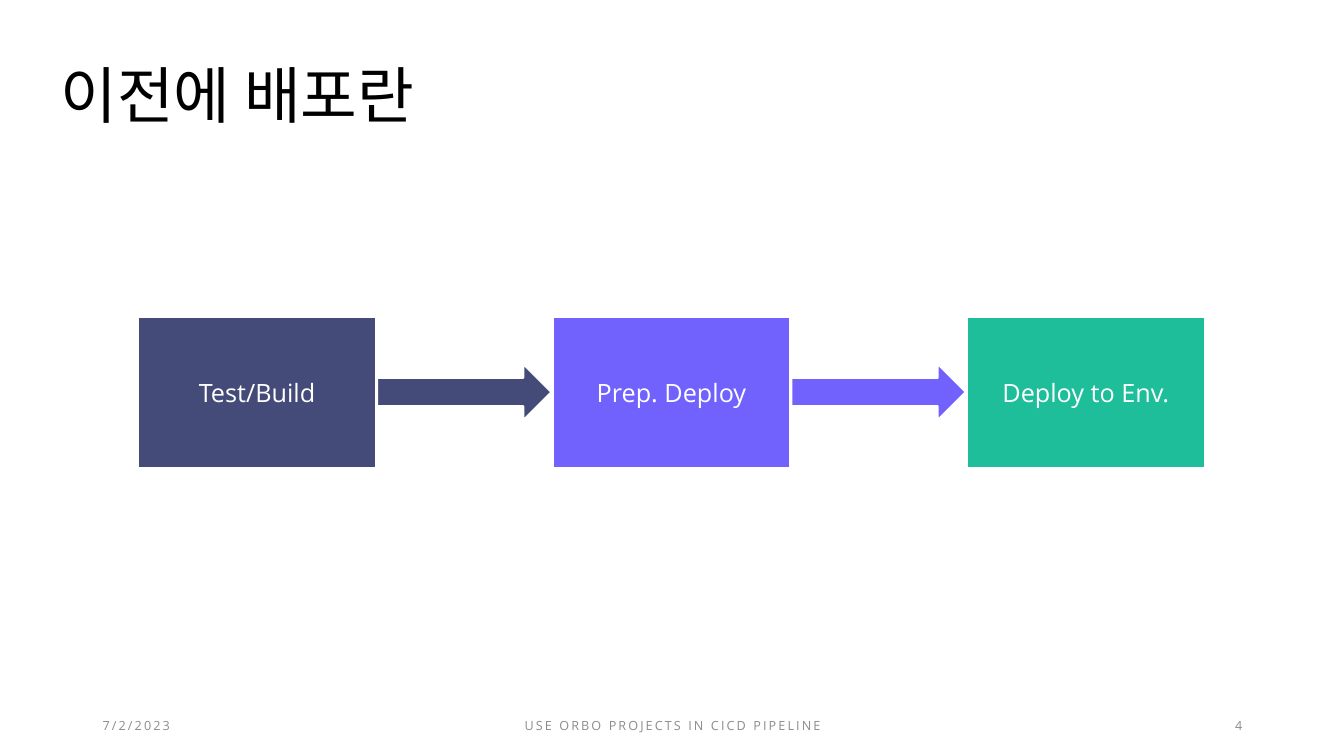
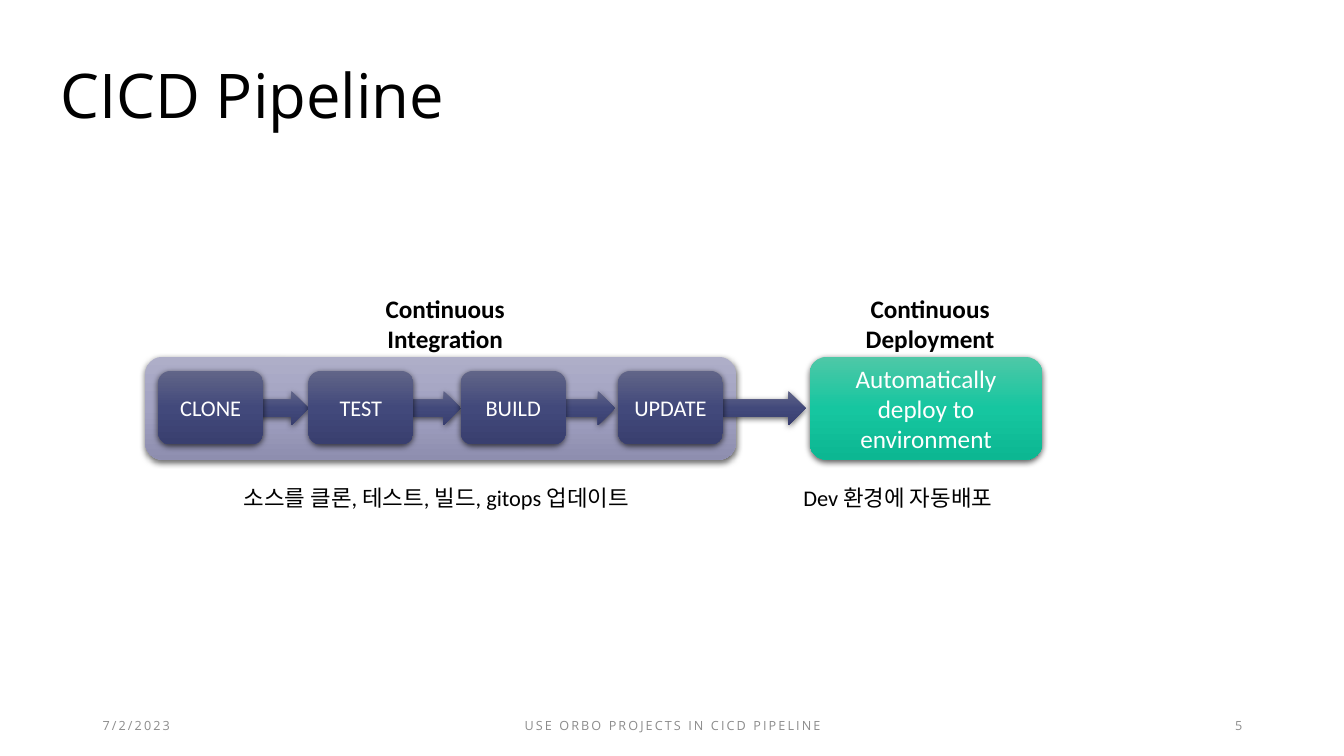
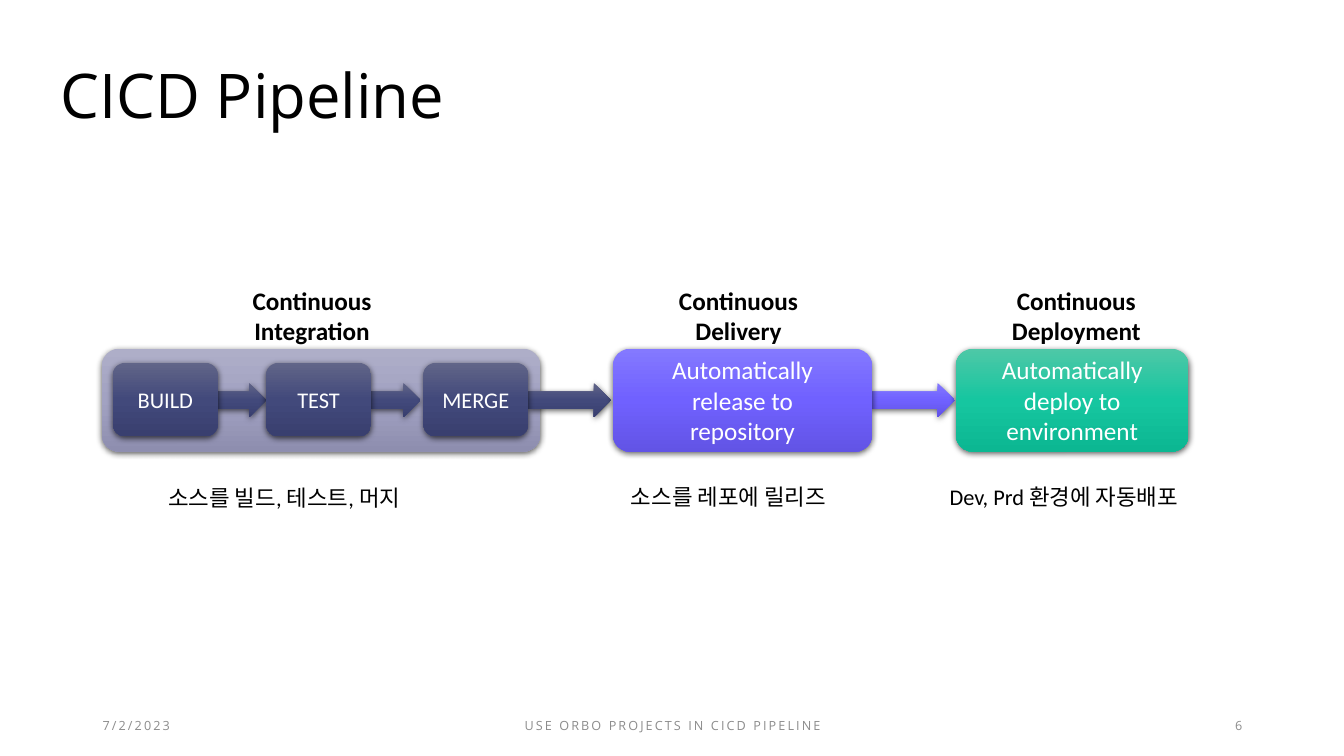
from copy import deepcopy

from lxml import etree
from pptx import Presentation
from pptx.dml.color import RGBColor
from pptx.enum.shapes import MSO_SHAPE
from pptx.enum.text import MSO_ANCHOR, MSO_AUTO_SIZE, PP_ALIGN
from pptx.oxml.ns import qn
from pptx.util import Emu, Pt

PX = 9144
RECTANGLE = MSO_SHAPE.RECTANGLE
ROUNDED = MSO_SHAPE.ROUNDED_RECTANGLE
ARROW = MSO_SHAPE.RIGHT_ARROW
LEFT, CENTER, RIGHT = PP_ALIGN.LEFT, PP_ALIGN.CENTER, PP_ALIGN.RIGHT
TOP, MIDDLE = MSO_ANCHOR.TOP, MSO_ANCHOR.MIDDLE
FIT_SHAPE = MSO_AUTO_SIZE.SHAPE_TO_FIT_TEXT

WHITE = RGBColor(0xFF, 0xFF, 0xFF)
BLACK = RGBColor(0x00, 0x00, 0x00)
GRAY = RGBColor(0x8C, 0x8C, 0x8C)
NAVY = RGBColor(0x45, 0x4B, 0x78)
VIOLET = RGBColor(0x71, 0x62, 0xFE)
GREEN = RGBColor(0x1E, 0xBE, 0x9B)
NAVY_SHADES = (RGBColor(0x61, 0x65, 0x88), RGBColor(0x42, 0x49, 0x7B), RGBColor(0x39, 0x3F, 0x6F))
VIOLET_SHADES = (RGBColor(0x84, 0x79, 0xFF), RGBColor(0x70, 0x61, 0xFF), RGBColor(0x62, 0x54, 0xE5))
GREEN_SHADES = (RGBColor(0x4E, 0xC8, 0xA7), RGBColor(0x16, 0xC6, 0xA0), RGBColor(0x0C, 0xB7, 0x92))
LAVENDER_SHADES = (RGBColor(0xAE, 0xAE, 0xC8), RGBColor(0xA2, 0xA2, 0xC2), RGBColor(0x8E, 0x8E, 0xAF))

TITLE = {"name": "Open Sans", "size": Pt(44), "color": BLACK}
FOOTER = {"name": "Open Sans", "size": Pt(9), "color": GRAY}
FLOW = {"name": "Open Sans", "size": Pt(18), "color": WHITE}
STAGE = {"name": "Calibri", "size": Pt(18), "color": WHITE}
STEP = {"name": "Calibri", "size": Pt(16), "color": WHITE}
HEADING = {"name": "Calibri", "size": Pt(18), "color": BLACK, "bold": True}
CAPTION = {"name": "Calibri", "size": Pt(16), "color": BLACK}

FOOTER_TEXT = "USE ORBO PROJECTS IN CICD PIPELINE"
STAGE_HEIGHT = 102
STEP_WIDTH, STEP_HEIGHT = 104, 73
SHORT_ARROW, LONG_ARROW, ARROW_HEIGHT = 49, 82, 34


def to_emu(box):
    """Turn a box in px into EMU lengths."""
    return [Emu(length * PX) for length in box]


def write(shape, text, style, align=CENTER, anchor=MIDDLE):
    """Write one styled paragraph into a shape and return the paragraph."""
    shape.text_frame.vertical_anchor = anchor
    paragraph = shape.text_frame.paragraphs[0]
    paragraph.text = text
    paragraph.alignment = align
    for run in paragraph.runs:
        for name, value in style.items():
            if name == "color":
                run.font.color.rgb = value
            else:
                setattr(run.font, name, value)
    return paragraph


def add_text(slide, box, text, style, align=LEFT, anchor=TOP, wrap=True):
    """Add a text box and return its frame."""
    shape = slide.shapes.add_textbox(*to_emu(box))
    shape.text_frame.word_wrap = wrap
    write(shape, text, style, align, anchor)
    return shape.text_frame


def add_flat(slide, kind, box, color):
    """Add a plain shape with a white outline."""
    shape = slide.shapes.add_shape(kind, *to_emu(box))
    shape.shadow.inherit = False
    shape.fill.solid()
    shape.fill.fore_color.rgb = color
    shape.line.color.rgb = WHITE
    shape.line.width = Pt(1.5)
    return shape


def add_raised(slide, kind, box, shades):
    """Add a shape with a three-stop vertical gradient and a soft shadow."""
    shape = slide.shapes.add_shape(kind, *to_emu(box))
    shape.line.fill.background()
    shape.fill.gradient()
    shape.fill.gradient_angle = 270
    properties = shape.element.spPr
    stop_list = properties.find(qn("a:gradFill")).find(qn("a:gsLst"))
    stop_list.append(deepcopy(stop_list[0]))
    for stop, position, shade in zip(shape.fill.gradient_stops, (0, 0.5, 1), shades):
        stop.position = position
        stop.color.rgb = shade
    shape.shadow.inherit = False
    effects = properties.find(qn("a:effectLst"))
    shadow = etree.SubElement(effects, qn("a:outerShdw"), blurRad=str(Pt(4.5)),
                              dist=str(Pt(1.5)), dir="5400000", algn="ctr", rotWithShape="0")
    color = etree.SubElement(shadow, qn("a:srgbClr"), val="000000")
    etree.SubElement(color, qn("a:alpha"), val="63000")
    return shape


def add_frame(presentation, title, number):
    """Add a blank slide with its title and footer."""
    slide = presentation.slides.add_slide(presentation.slide_layouts[6])
    frame = add_text(slide, (50, 60, 1229, 91), title, TITLE)
    frame.paragraphs[0].line_spacing = 0.9
    for left, width, text, align in ((92, 300, "7/2/2023", LEFT),
                                     (442, 450, FOOTER_TEXT, CENTER),
                                     (942, 300, str(number), RIGHT)):
        frame = add_text(slide, (left, 700, width, 40), text, FOOTER, align, MIDDLE)
        for run in frame.paragraphs[0].runs:
            run.font._element.set("spc", "150")
    return slide


def add_flow(slide, box, stages):
    """Add evenly spaced flat boxes with an arrow in each gap."""
    left, top, width, height = box
    box_width, arrow_width, arrow_height = 236, 173, 56
    pitch = (width - box_width) // (len(stages) - 1)
    arrow_inset = (pitch - box_width - arrow_width) // 2
    for index, (text, color) in enumerate(stages):
        x = left + index * pitch
        write(add_flat(slide, RECTANGLE, (x, top, box_width, height), color), text, FLOW)
        if index < len(stages) - 1:
            add_flat(slide, ARROW, (x + box_width + arrow_inset, top + (height - arrow_height) // 2,
                                    arrow_width, arrow_height), color)


def add_arrow(slide, left, stage_top, width, shades):
    """Add an arrow centred on the height of a stage."""
    top = stage_top + (STAGE_HEIGHT - ARROW_HEIGHT) // 2
    add_raised(slide, ARROW, (left, top, width, ARROW_HEIGHT), shades)


def add_labels(slide, stage_top, heading_left, heading, caption_box, caption):
    """Add the heading above a stage and the caption below it."""
    frame = add_text(slide, (heading_left, stage_top - 68, 185, 71), heading, HEADING, CENTER)
    frame.auto_size = FIT_SHAPE
    frame = add_text(slide, caption_box, caption, CAPTION, wrap=False)
    frame.auto_size = FIT_SHAPE


def add_integration(slide, left, top, width, steps):
    """Add the integration panel with its steps and arrows."""
    add_raised(slide, ROUNDED, (left, top, width, STAGE_HEIGHT), LAVENDER_SHADES)
    lefts = [left + offset for _, offset in steps]
    for step_left, next_left in zip(lefts, lefts[1:]):
        arrow_left = min(step_left + STEP_WIDTH, next_left - SHORT_ARROW)
        add_arrow(slide, arrow_left, top, SHORT_ARROW, NAVY_SHADES)
    add_arrow(slide, lefts[-1] + STEP_WIDTH, top, LONG_ARROW, NAVY_SHADES)
    for (text, _), step_left in zip(steps, lefts):
        box = (step_left, top + 14, STEP_WIDTH, STEP_HEIGHT)
        write(add_raised(slide, ROUNDED, box, NAVY_SHADES), text, STEP)


def add_stage(slide, left, top, width, text, shades):
    """Add one stage box with its text."""
    box = (left, top, width, STAGE_HEIGHT)
    write(add_raised(slide, ROUNDED, box, shades), text, STAGE)


def build_flow_slide(presentation):
    """Build the slide on the former way to deploy."""
    slide = add_frame(presentation, "이전에 배포란", 4)
    add_flow(slide, (137, 314, 1059, 150),
             (("Test/Build", NAVY), ("Prep. Deploy", VIOLET), ("Deploy to Env.", GREEN)))


def build_deployment_slide(presentation):
    """Build the pipeline slide with two stages."""
    slide = add_frame(presentation, "CICD Pipeline", 5)
    top = 354
    add_integration(slide, 144, top, 586,
                    (("CLONE", 13), ("TEST", 162), ("BUILD", 313), ("UPDATE", 469)))
    add_stage(slide, 803, top, 231, "Automatically\ndeploy to\nenvironment", GREEN_SHADES)
    add_labels(slide, top, 349, "Continuous\nIntegration", (232, 475, 432, 37),
               "소스를 클론, 테스트, 빌드, gitops 업데이트")
    add_labels(slide, top, 830, "Continuous\nDeployment", (787, 475, 223, 37),
               "Dev 환경에 자동배포")


def build_delivery_slide(presentation):
    """Build the pipeline slide with three stages."""
    slide = add_frame(presentation, "CICD Pipeline", 6)
    top = 346
    add_integration(slide, 101, top, 435, (("BUILD", 11), ("TEST", 163), ("MERGE", 319)))
    add_arrow(slide, 865, top, LONG_ARROW, VIOLET_SHADES)
    add_stage(slide, 608, top, 257, "Automatically\nrelease to\nrepository", VIOLET_SHADES)
    add_stage(slide, 948, top, 231, "Automatically\ndeploy to\nenvironment", GREEN_SHADES)
    add_labels(slide, top, 217, "Continuous\nIntegration", (157, 475, 271, 37),
               "소스를 빌드, 테스트, 머지")
    add_labels(slide, top, 640, "Continuous\nDelivery", (616, 474, 232, 37),
               "소스를 레포에 릴리즈")
    add_labels(slide, top, 975, "Continuous\nDeployment", (932, 474, 262, 37),
               "Dev, Prd 환경에 자동배포")


def main():
    """Build and save the presentation."""
    presentation = Presentation()
    presentation.slide_width, presentation.slide_height = to_emu((1333, 750))
    build_flow_slide(presentation)
    build_deployment_slide(presentation)
    build_delivery_slide(presentation)
    presentation.save("out.pptx")


if __name__ == "__main__":
    main()
